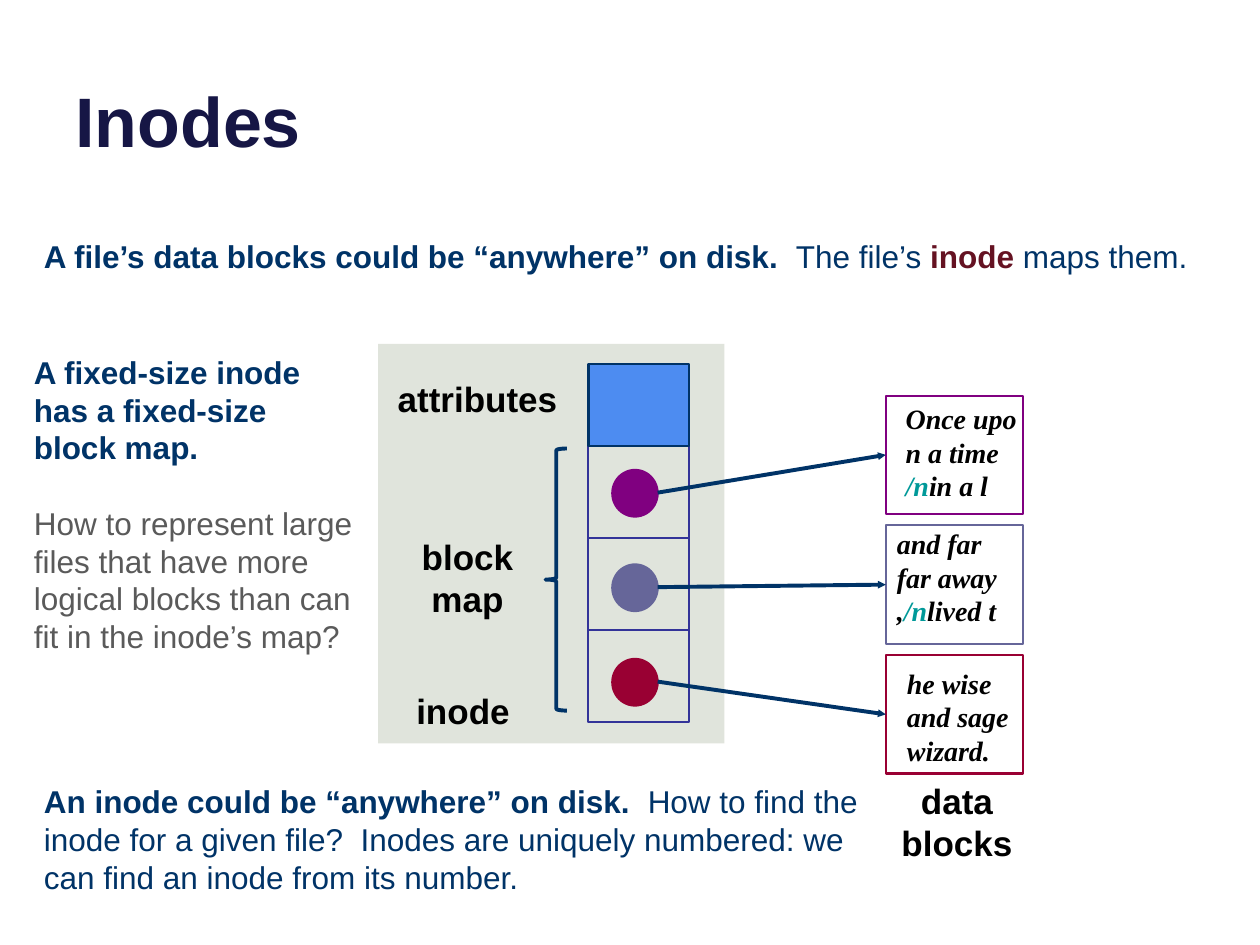
from dataclasses import dataclass

from pptx import Presentation, util as u
from pptx.dml.color import RGBColor
from pptx.enum import shapes, text
from pptx.oxml import ns
from lxml import etree

PX = 9144  # EMU in one px, 100 px to the inch


@dataclass(frozen=True)
class Theme:
    sans: str = "Arial"
    serif: str = "Times New Roman"
    title_size: int = 40
    label_size: int = 20
    body_size: int = 18
    data_size: int = 16
    title: str = "161645"
    navy: str = "003367"
    maroon: str = "651222"
    grey: str = "5A5A5A"
    black: str = "000000"
    white: str = "FFFFFF"
    newline: str = "009999"
    panel: str = "E0E4DC"
    attributes: str = "4D8CF1"
    grid: str = "333399"
    blocks: tuple = ("800080", "666699", "990033")


THEME = Theme()
BLOCK_HEIGHT, BLOCK_PITCH = 94, 103
DOT_SIZE, DOT_PITCH = 36, 75
ROW_HEIGHT = 73
BLOCK_TEXTS = (
    # left and top of the text in its block, then its paragraphs
    (6, 0, (("Once upo",), ("n a time",), ("/n", "in a l"))),
    (-1, -4, (("and far",), ("far away",), (",", "/n", "lived t"))),
    (7, 4, (("he wise and sage",), ("wizard.",))),
)


def px(*lengths):
    return [u.Emu(length * PX) for length in lengths]


def color(value):
    return RGBColor.from_string(value)


def set_font(font, size, value, name=THEME.sans, bold=None, italic=None):
    font.name, font.size, font.bold, font.italic = name, u.Pt(size), bold, italic
    font.color.rgb = color(value)


def add_text(page, box, paragraphs, align=text.PP_ALIGN.LEFT, **font):
    """Write paragraphs of (words, run overrides) spans in a wrapping box."""
    frame = page.shapes.add_textbox(*px(*box)).text_frame
    frame.word_wrap = True
    for index, spans in enumerate(paragraphs):
        para = frame.add_paragraph() if index else frame.paragraphs[0]
        para.alignment = align
        set_font(para.font, **font)
        for words, override in spans:
            span = para.add_run()
            span.text = words
            if "bold" in override:
                span.font.bold = override["bold"]
            if "value" in override:
                span.font.color.rgb = color(override["value"])
    return frame


def add_label(page, box, words):
    add_text(page, box, [[(words, {})]], text.PP_ALIGN.CENTER,
             size=THEME.label_size, value=THEME.black, bold=True)


def add_body(page, box, *paragraphs):
    return add_text(page, box, paragraphs, size=THEME.body_size, value=THEME.navy)


def add_form(parent, kind, box, fill=None, line=None, width=1.25):
    form = parent.shapes.add_shape(kind, *px(*box))
    form.shadow.inherit = False
    if fill:
        form.fill.solid()
        form.fill.fore_color.rgb = color(fill)
    else:
        form.fill.background()
    if line:
        form.line.color.rgb = color(line)
        form.line.width = u.Pt(width)
    else:
        form.line.fill.background()
    return form


def add_line(parent, start, end, value, width, arrow=False):
    line = parent.shapes.add_connector(
        shapes.MSO_CONNECTOR.STRAIGHT, *px(*start, *end))
    line.line.color.rgb = color(value)
    line.line.width = u.Pt(width)
    if arrow:
        etree.SubElement(line.line._get_or_add_ln(), ns.qn("a:tailEnd"),
                         type="triangle", w="sm", len="sm")
    etree.SubElement(line._element.spPr, ns.qn("a:effectLst"))


def add_title(page, box, words):
    title = page.shapes.title
    title.left, title.top, title.width, title.height = px(*box)
    frame = title.text_frame
    frame.vertical_anchor = text.MSO_ANCHOR.BOTTOM
    frame.text = words
    para = frame.paragraphs[0]
    para.alignment = text.PP_ALIGN.LEFT
    set_font(para.font, THEME.title_size, THEME.title, bold=True)


def add_slots(page, left, top, width):
    """Stack the attribute cell on the three rows of the block map."""
    group = page.shapes.add_group_shape()
    rect = shapes.MSO_SHAPE.RECTANGLE
    rows_top = top + 65
    add_form(group, rect, (left, rows_top, width, 3 * ROW_HEIGHT), line=THEME.grid)
    for row in (1, 2):
        y = rows_top + row * ROW_HEIGHT
        add_line(group, (left, y), (left + width, y), THEME.grid, 1.25)
    add_form(group, rect, (left, top, width, 65), THEME.attributes, THEME.navy, 1.5)


def add_inode(page, box):
    """Draw the inode and return the points its pointers start from."""
    left, top, width, height = box
    add_form(page, shapes.MSO_SHAPE.RECTANGLE, box, THEME.panel)
    add_label(page, (left, top + 22, 158, 44), "attributes")
    add_label(page, (left + 17, top + 147, 108, 77), "block map")
    add_label(page, (left, top + 269, 135, 44), "inode")
    add_form(page, shapes.MSO_SHAPE.LEFT_BRACE, (left + 133, top + 83, 17, 208),
             line=THEME.navy, width=2.25)
    add_slots(page, left + 167, top + 16, 80)
    starts = []
    for index, value in enumerate(THEME.blocks):
        x, y = left + 186, top + 100 + index * DOT_PITCH
        add_form(page, shapes.MSO_SHAPE.OVAL, (x, y, DOT_SIZE, DOT_SIZE + 1),
                 value, value)
        starts.append((x + DOT_SIZE, y + DOT_SIZE // 2))
    return starts


def add_data_blocks(page, box):
    """Draw the data blocks and return the points where pointers arrive."""
    left, top, width, height = box
    ends = []
    for index, (value, (dx, dy, lines)) in enumerate(zip(THEME.blocks, BLOCK_TEXTS)):
        y = top + index * BLOCK_PITCH
        add_form(page, shapes.MSO_SHAPE.RECTANGLE, (left, y, width, BLOCK_HEIGHT),
                 THEME.white, value)
        paragraphs = [[(words, {"value": THEME.newline} if words == "/n" else {})
                       for words in line] for line in lines]
        add_text(page, (left + dx, y + dy, 117, 90), paragraphs, size=THEME.data_size,
                 value=THEME.black, name=THEME.serif, bold=True, italic=True)
        ends.append((left, y + BLOCK_HEIGHT // 2))
    add_label(page, (left - 11, top + height, 135, 77), "data blocks")
    return ends


def add_notes_on_inodes(page):
    strong = {"bold": True}
    add_body(page, (25, 183, 950, 40), [
        ("A file’s data blocks could be “anywhere” on disk.  ", strong),
        ("The file’s ", {}),
        ("inode ", {"bold": True, "value": THEME.maroon}),
        ("maps them.", {})])
    side = add_body(
        page, (17, 275, 275, 252),
        [("A fixed-size inode has a fixed-size block map.", strong)],
        [("How to represent large files that have more logical blocks "
          "than can fit in the inode’s map?", {"value": THEME.grey})])
    side.paragraphs[1].space_before = u.Pt(21.5)
    add_body(page, (25, 616, 675, 101), [
        ("An inode could be “anywhere” on disk.  ", strong),
        ("How to find the inode for a given file?  Inodes are uniquely "
         "numbered: we can find an inode from its number.", {})])


def main():
    deck = Presentation()
    deck.slide_width, deck.slide_height = px(1000, 750)
    page = deck.slides.add_slide(deck.slide_layouts[5])
    add_title(page, (50, -37, 900, 170), "Inodes")
    add_notes_on_inodes(page)
    starts = add_inode(page, (300, 273, 275, 317))
    ends = add_data_blocks(page, (703, 314, 109, 300))
    for start, end in zip(starts, ends):
        add_line(page, start, end, THEME.navy, 2.25, arrow=True)
    deck.save("out.pptx")


if __name__ == "__main__":
    main()
